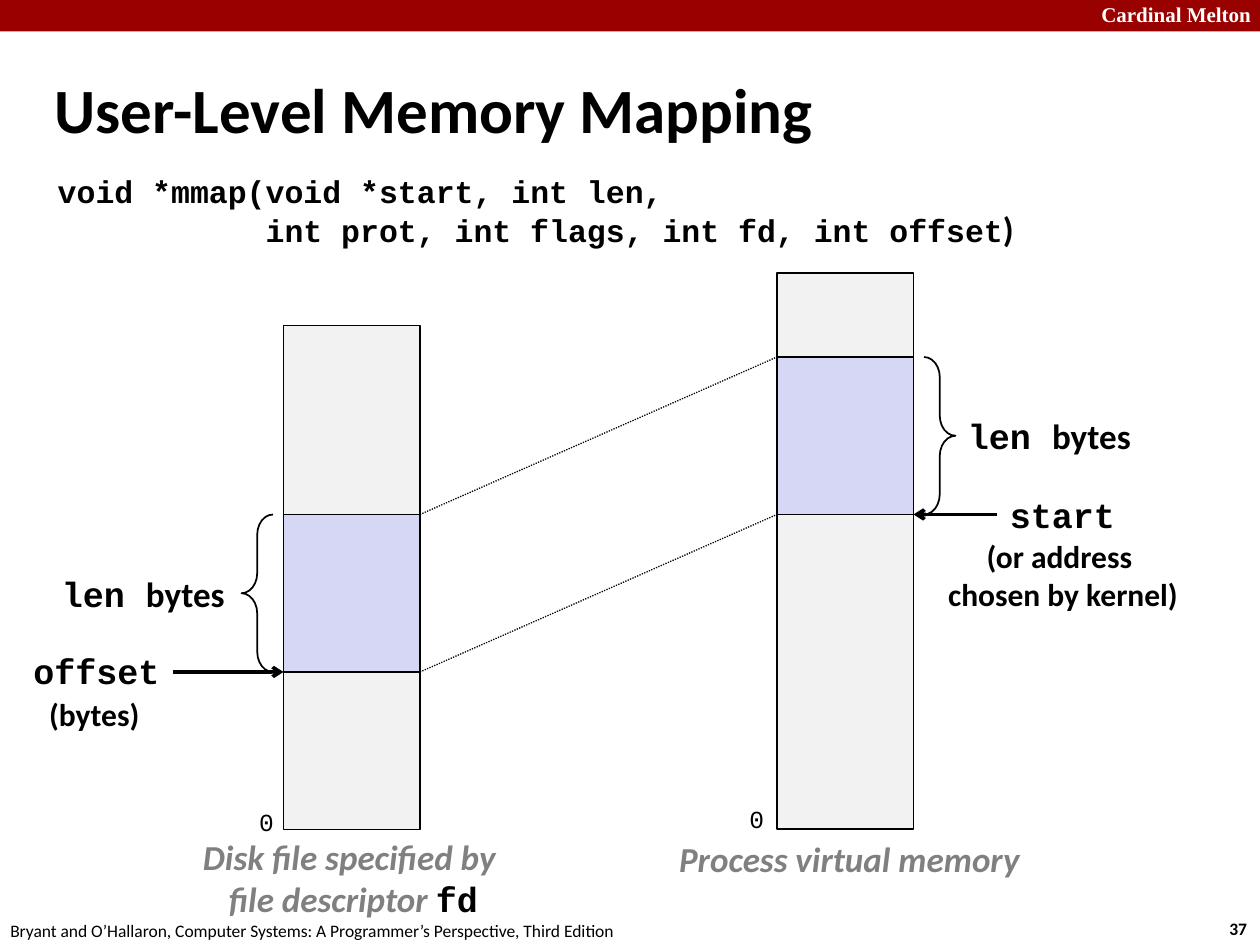
from dataclasses import dataclass

from lxml import etree
from pptx import Presentation
from pptx import util as u
from pptx.dml.color import RGBColor
from pptx.enum import dml, shapes, text
from pptx.oxml.ns import qn

COLUMNS, ROWS = 120, 90
CELL = u.Inches(10) // COLUMNS
BAR_WIDTH, MAPPED_ROWS, MEMORY_END = 13, 15, 79
FILE_LEFT, FILE_MAPPED = 27, 49
PROCESS_LEFT, PROCESS_MAPPED = 74, 34


@dataclass(frozen=True)
class Theme:
    banner: str = "990000"
    memory: str = "F2F2F2"
    mapped: str = "D6D6F5"
    ink: str = "000000"
    caption: str = "808080"
    paper: str = "FFFFFF"
    sans: str = "Calibri"
    mono: str = "Courier New"
    serif: str = "Times New Roman"
    title: int = 36
    label: int = 20
    detail: int = 18
    zero: int = 14
    banner_text: int = 12
    footer: int = 10


THEME = Theme()


def style(name, size, color=THEME.ink, bold=True, italic=False):
    return {"name": name, "size": u.Pt(size), "bold": bold,
            "italic": italic, "color": color}


TITLE = style(THEME.sans, THEME.title)
LABEL = style(THEME.sans, THEME.label)
KEYWORD = style(THEME.mono, THEME.label)
CODE = style(THEME.mono, THEME.detail)
DETAIL = style(THEME.sans, THEME.detail)
CAPTION = style(THEME.sans, THEME.label, THEME.caption, italic=True)
ZERO = style(THEME.mono, THEME.zero, bold=False)
BANNER = style(THEME.serif, THEME.banner_text, THEME.paper)
FOOTER = style(THEME.sans, THEME.footer, bold=False)
PAGE = style(THEME.sans, THEME.footer)


def cells(*lengths):
    return [round(length * CELL) for length in lengths]


def rgb(color):
    return RGBColor.from_string(color)


def write(frame, lines, **paragraph_format):
    """Fill a text frame; each line is a list of (wording, style) runs."""
    for number, runs in enumerate(lines):
        paragraph = frame.paragraphs[0] if number == 0 else frame.add_paragraph()
        for attribute, value in paragraph_format.items():
            setattr(paragraph, attribute, value)
        for wording, run_style in runs:
            run = paragraph.add_run()
            run.text = wording
            for attribute, value in run_style.items():
                if attribute == "color":
                    run.font.color.rgb = rgb(value)
                else:
                    setattr(run.font, attribute, value)


def add_label(slide, area, *lines, align=text.PP_ALIGN.LEFT):
    frame = slide.shapes.add_textbox(*cells(*area)).text_frame
    frame.word_wrap = False
    frame.auto_size = text.MSO_AUTO_SIZE.SHAPE_TO_FIT_TEXT
    write(frame, lines, alignment=align)


def fill_placeholder(placeholder, area, lines, anchor, **paragraph_format):
    for attribute, value in zip(("left", "top", "width", "height"), cells(*area)):
        setattr(placeholder, attribute, value)
    frame = placeholder.text_frame
    frame.auto_size = text.MSO_AUTO_SIZE.NONE
    frame.vertical_anchor = anchor
    write(frame, lines, alignment=text.PP_ALIGN.LEFT, **paragraph_format)
    return frame.paragraphs


def set_indent(paragraph, columns):
    properties = paragraph._p.get_or_add_pPr()
    properties.set("marL", str(round(columns * CELL)))
    properties.set("indent", "0")
    etree.SubElement(properties, qn("a:buNone"))


def add_block(slide, kind, area, fill=None, outlined=True):
    block = slide.shapes.add_shape(kind, *cells(*area))
    block.shadow.inherit = False
    if fill:
        block.fill.solid()
        block.fill.fore_color.rgb = rgb(fill)
    else:
        block.fill.background()
    if outlined:
        block.line.color.rgb = rgb(THEME.ink)
        block.line.width = u.Pt(1)
    else:
        block.line.fill.background()
    return block


def add_memory(slide, left, top, mapped_top):
    """Draw an address space with its mapped region."""
    for row, height, fill in ((top, MEMORY_END - top, THEME.memory),
                              (mapped_top, MAPPED_ROWS, THEME.mapped)):
        add_block(slide, shapes.MSO_SHAPE.RECTANGLE,
                  (left, row, BAR_WIDTH, height), fill)


def add_brace(slide, kind, left, top):
    brace = add_block(slide, kind, (left, top, 3, MAPPED_ROWS))
    brace.adjustments[0] = 0.64


def add_line(slide, start, end, width, dash=None, arrow=False):
    line = slide.shapes.add_connector(shapes.MSO_CONNECTOR.STRAIGHT,
                                      *cells(*start, *end))
    line.line.color.rgb = rgb(THEME.ink)
    line.line.width = u.Pt(width)
    if dash:
        line.line.dash_style = dash
    if arrow:
        etree.SubElement(line.line._get_or_add_ln(), qn("a:tailEnd"), type="arrow")
    etree.SubElement(line._element.spPr, qn("a:effectLst"))


def add_frame(slide):
    """Add the banner and the footer."""
    add_block(slide, shapes.MSO_SHAPE.RECTANGLE, (0, 0, COLUMNS, 3),
              THEME.banner, outlined=False)
    add_label(slide, (103.7, -0.4, 17.2, 3.6), [("Cardinal Melton", BANNER)])
    add_label(slide, (115.9, 86.8, 4.4, 3.2), [("37", PAGE)])
    add_label(slide, (-0.2, 87, 61, 3.2), [
        ("Bryant and O’Hallaron, Computer Systems: "
         "A Programmer’s Perspective, Third Edition", FOOTER)])


def add_heading(slide):
    title, signature = slide.placeholders
    fill_placeholder(title, (4, 6.5, 95.3, 7.6),
                     [[("User-Level Memory Mapping", TITLE)]],
                     text.MSO_ANCHOR.MIDDLE)
    code_lines = fill_placeholder(
        signature, (4.3, 16.1, 109, 10.9),
        [[("void *mmap(void *start, int len,", CODE)],
         [("int prot, int flags, int fd, int offset", CODE), (")", LABEL)]],
        text.MSO_ANCHOR.TOP, line_spacing=0.94, space_before=u.Pt(0))
    for paragraph, indent in zip(code_lines, (0, 19.8)):
        set_indent(paragraph, indent)


def add_diagram(slide):
    add_memory(slide, FILE_LEFT, 31, FILE_MAPPED)
    add_memory(slide, PROCESS_LEFT, 26, PROCESS_MAPPED)
    for offset in (0, MAPPED_ROWS):
        add_line(slide, (FILE_LEFT + BAR_WIDTH, FILE_MAPPED + offset),
                 (PROCESS_LEFT, PROCESS_MAPPED + offset), 0.75,
                 dash=dml.MSO_LINE.ROUND_DOT)
    add_brace(slide, shapes.MSO_SHAPE.LEFT_BRACE, FILE_LEFT - 4, FILE_MAPPED)
    add_brace(slide, shapes.MSO_SHAPE.RIGHT_BRACE,
              PROCESS_LEFT + BAR_WIDTH + 1, PROCESS_MAPPED)
    file_offset = FILE_MAPPED + MAPPED_ROWS
    process_start = PROCESS_MAPPED + MAPPED_ROWS
    add_line(slide, (16.5, file_offset), (FILE_LEFT, file_offset), 2, arrow=True)
    add_line(slide, (95, process_start),
             (PROCESS_LEFT + BAR_WIDTH, process_start), 2, arrow=True)


def add_diagram_labels(slide):
    center = text.PP_ALIGN.CENTER
    for left, top in ((4.7, 53.9), (91, 38.9)):
        add_label(slide, (left, top, 18.1, 5.3), [("len ", KEYWORD), ("bytes", LABEL)])
    for left, top in ((23.5, 76.3), (70.2, 76)):
        add_label(slide, (left, top, 3.8, 4.1), [("0", ZERO)])
    add_label(slide, (2, 61.3, 14.5, 5.3), [("offset", KEYWORD)])
    add_label(slide, (3.5, 65.6, 11, 4.8), [("(bytes)", DETAIL)])
    add_label(slide, (95, 46.4, 12.5, 5.3), [("start", KEYWORD)])
    add_label(slide, (89, 50.6, 24.5, 8.5), [("(or address ", DETAIL)],
              [("chosen by kernel)", DETAIL)], align=center)
    add_label(slide, (63.5, 79.2, 35, 5.3), [("Process virtual memory", CAPTION)])
    add_label(slide, (18, 79, 31.3, 9.2), [("Disk file specified by ", CAPTION)],
              [("file descriptor ", CAPTION), ("fd", KEYWORD)], align=center)


def main():
    deck = Presentation()
    deck.slide_width, deck.slide_height = cells(COLUMNS, ROWS)
    slide = deck.slides.add_slide(deck.slide_layouts[1])
    add_frame(slide)
    add_heading(slide)
    add_diagram(slide)
    add_diagram_labels(slide)
    deck.save("out.pptx")


if __name__ == "__main__":
    main()
